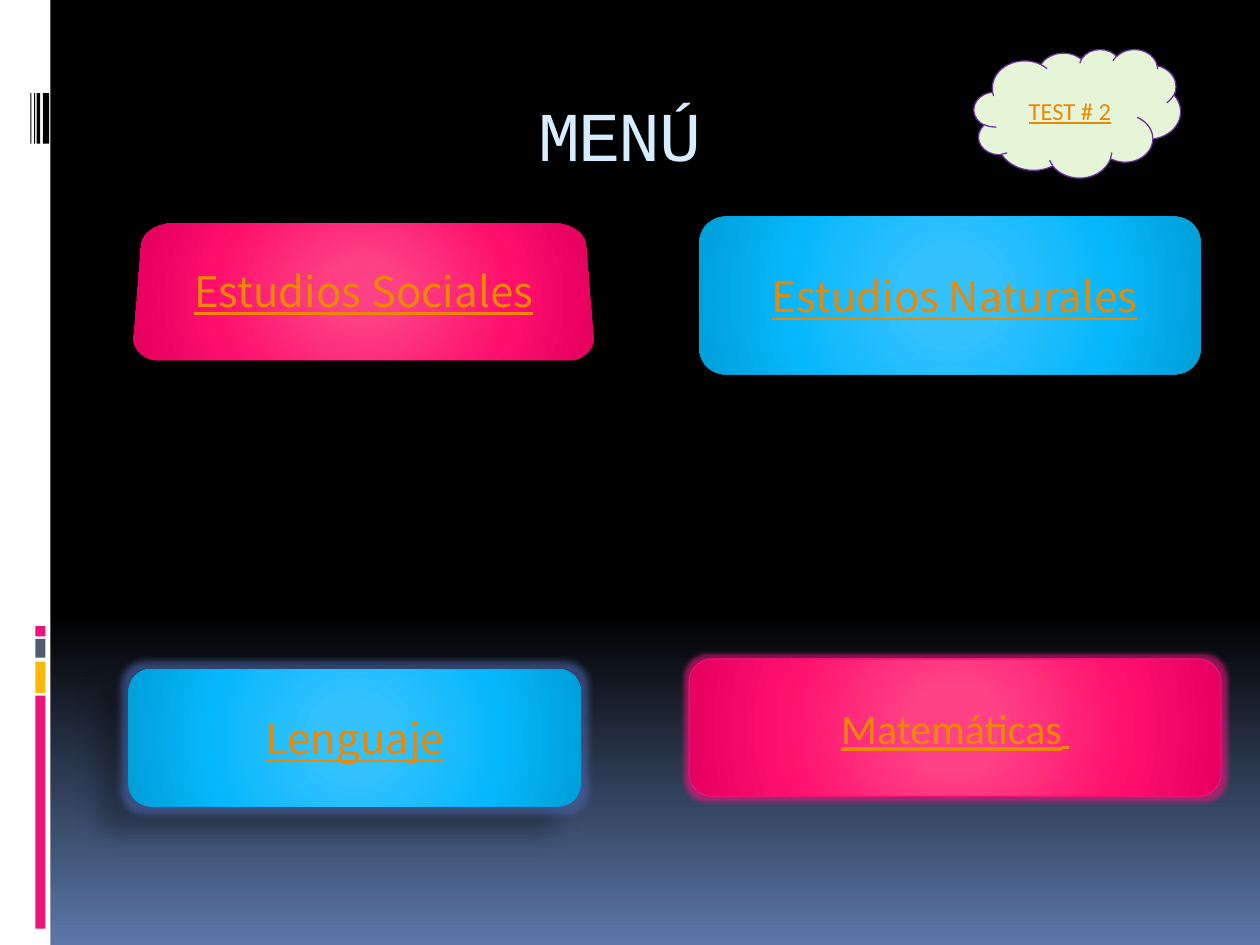
from lxml import etree
from pptx import Presentation
from pptx.dml.color import RGBColor
from pptx.enum.shapes import MSO_SHAPE
from pptx.enum.text import MSO_ANCHOR, PP_ALIGN
from pptx.oxml import parse_xml
from pptx.oxml.ns import nsdecls, qn
from pptx.util import Inches, Pt

WHITE = RGBColor(0xFF, 0xFF, 0xFF)
BLACK = RGBColor(0x00, 0x00, 0x00)
PINK = RGBColor(0xEA, 0x15, 0x7A)
YELLOW = RGBColor(0xFE, 0xB8, 0x0A)
SLATE = RGBColor(0x4E, 0x5B, 0x6F)
ICE = RGBColor(0xD6, 0xEC, 0xFF)
ORANGE = RGBColor(0xEB, 0x88, 0x03)
MINT = RGBColor(0xE5, 0xF6, 0xD8)
PURPLE = RGBColor(0x70, 0x30, 0xA0)
STEEL = RGBColor(0x5B, 0x77, 0xA8)
GLOW_BLUE = RGBColor(0x4A, 0x66, 0xAC)

NIGHT_STOPS = [(0, BLACK), (65, BLACK), (100, STEEL)]
PINK_STOPS = list(zip((0, 15, 62, 97, 100), map(
    RGBColor.from_string, ("FF4386", "FF4285", "FF116E", "E80061", "CF0062"))))
BLUE_STOPS = list(zip((0, 15, 62, 97, 100), map(
    RGBColor.from_string, ("35C2FF", "34C2FF", "07B7FB", "00A1DB", "008DB3"))))

CENTRE_PATH = ('<a:path path="circle">'
               '<a:fillToRect l="50000" t="50000" r="50000" b="50000"/></a:path>')
DOWNWARD = '<a:lin ang="5400000" scaled="0"/>'


def set_gradient(fill, element, stops, direction):
    """Give fill, held inside element, any number of stops and a direction."""
    fill.gradient()
    old = next(element.iter(qn("a:gradFill")))
    stop_xml = "".join(f'<a:gs pos="{pos * 1000}"><a:srgbClr val="{color}"/></a:gs>'
                       for pos, color in stops)
    old.getparent().replace(old, parse_xml(
        f'<a:gradFill {nsdecls("a")} rotWithShape="1">'
        f'<a:gsLst>{stop_xml}</a:gsLst>{direction}</a:gradFill>'))


def write(paragraph, text, size, font, color, underline=True):
    run = paragraph.add_run()
    run.text = text
    run.font.size = Pt(size)
    run.font.name = font
    run.font.color.rgb = color
    run.font.underline = underline
    return run


prs = Presentation()
prs.slide_width, prs.slide_height = Inches(10), Inches(7.5)
slide = prs.slides.add_slide(prs.slide_layouts[6])
set_gradient(slide.background.fill, slide.element, NIGHT_STOPS, DOWNWARD)

# White side strip with its coloured blocks and thin bars
for left, top, width, height, color in [
    (0, 0, 0.4, 7.5, WHITE),
    (0.28, 5.52, 0.08, 1.85, PINK),
    (0.28, 5.25, 0.08, 0.25, YELLOW),
    (0.28, 5.07, 0.08, 0.15, SLATE),
    (0.28, 4.97, 0.08, 0.08, PINK),
    (0.34, 0.74, 0.05, 0.4, BLACK),
    (0.29, 0.74, 0.03, 0.4, BLACK),
    (0.27, 0.74, 0.01, 0.4, BLACK),
    (0.24, 0.74, 0.01, 0.4, BLACK),
]:
    block = slide.shapes.add_shape(MSO_SHAPE.RECTANGLE, Inches(left), Inches(top),
                                   Inches(width), Inches(height))
    block.shadow.inherit = False
    block.fill.solid()
    block.fill.fore_color.rgb = color
    block.line.fill.background()

title = slide.shapes.add_textbox(Inches(1), Inches(0.56), Inches(8.5), Inches(1))
title.text_frame.word_wrap = True
title.text_frame.vertical_anchor = MSO_ANCHOR.MIDDLE
title.text_frame.margin_right = Inches(0.76)
heading = title.text_frame.paragraphs[0]
heading.alignment = PP_ALIGN.CENTER
heading_run = write(heading, "MENÚ", 40, "Courier New", ICE, underline=False)
heading_run.font._element.set("spc", "-100")

# Menu buttons: place, stops or plain colour, outline, glow, shadow, text
# glow: colour, radius in points; shadow: opacity %, blur, distance, angle
ROUND, CLOUD = MSO_SHAPE.ROUNDED_RECTANGLE, MSO_SHAPE.CLOUD
CJK = "Noto Sans CJK KR"
buttons = {}
for kind, place, paint, outline, glow, shadow, label, size, font in [
    (ROUND, (1.09, 1.64, 3.59, 1.33), PINK_STOPS, PINK, None, (43, 5, 2, 90),
     "Estudios Sociales", 24, CJK),
    (ROUND, (5.55, 1.72, 3.98, 1.25), BLUE_STOPS, None, None, (100, 8.5, 1, 90),
     "Estudios Naturales", 24, CJK),
    (ROUND, (1.02, 5.31, 3.59, 1.09), BLUE_STOPS, None, (GLOW_BLUE, 8),
     (28, 11.8, 19.7, 141), "Lenguaje", 24, CJK),
    (ROUND, (5.47, 5.23, 4.22, 1.09), PINK_STOPS, PINK, (PINK, 5), None,
     "Matemáticas", 24, "Calibri"),
    (CLOUD, (7.73, 0.39, 1.64, 1.02), MINT, PURPLE, None, (43, 5, 2, 90),
     "TEST # 2", 14, "Calibri"),
]:
    button = slide.shapes.add_shape(kind, *map(Inches, place))
    button.shadow.inherit = False
    if kind == CLOUD:
        button.fill.solid()
        button.fill.fore_color.rgb = paint
    else:
        set_gradient(button.fill, button.element.spPr, paint, CENTRE_PATH)
    if outline:
        button.line.color.rgb = outline
        button.line.width = Pt(0.75)
    else:
        button.line.fill.background()

    effects = button.element.spPr.find(qn("a:effectLst"))
    if glow:
        color, radius = glow
        effects.append(parse_xml(
            f'<a:glow {nsdecls("a")} rad="{Pt(radius)}"><a:srgbClr val="{color}">'
            '<a:alpha val="60000"/></a:srgbClr></a:glow>'))
    if shadow:
        opacity, blur, distance, angle = shadow
        effects.append(parse_xml(
            f'<a:outerShdw {nsdecls("a")} blurRad="{Pt(blur)}" dist="{Pt(distance)}" '
            f'dir="{angle * 60000}" rotWithShape="0"><a:srgbClr val="{BLACK}">'
            f'<a:alpha val="{opacity * 1000}"/></a:srgbClr></a:outerShdw>'))

    button.text_frame.word_wrap = True
    button.text_frame.vertical_anchor = MSO_ANCHOR.MIDDLE
    line = button.text_frame.paragraphs[0]
    line.alignment = PP_ALIGN.CENTER
    write(line, label, size, font, ORANGE)
    buttons[label] = button

# The first button leans back in perspective
scene = etree.SubElement(buttons["Estudios Sociales"].element.spPr, qn("a:scene3d"))
etree.SubElement(scene, qn("a:camera"), prst="perspectiveRelaxedModerately")
etree.SubElement(scene, qn("a:lightRig"), rig="threePt", dir="t")

naturales = buttons["Estudios Naturales"].text_frame.paragraphs[0]
naturales.space_before = Pt(7)
indents = naturales._p.get_or_add_pPr()
indents.set("marL", str(Inches(0.45)))
indents.set("indent", str(Inches(-0.38)))

write(buttons["Matemáticas"].text_frame.paragraphs[0], " ", 18, "Calibri", ORANGE)

prs.save("out.pptx")
